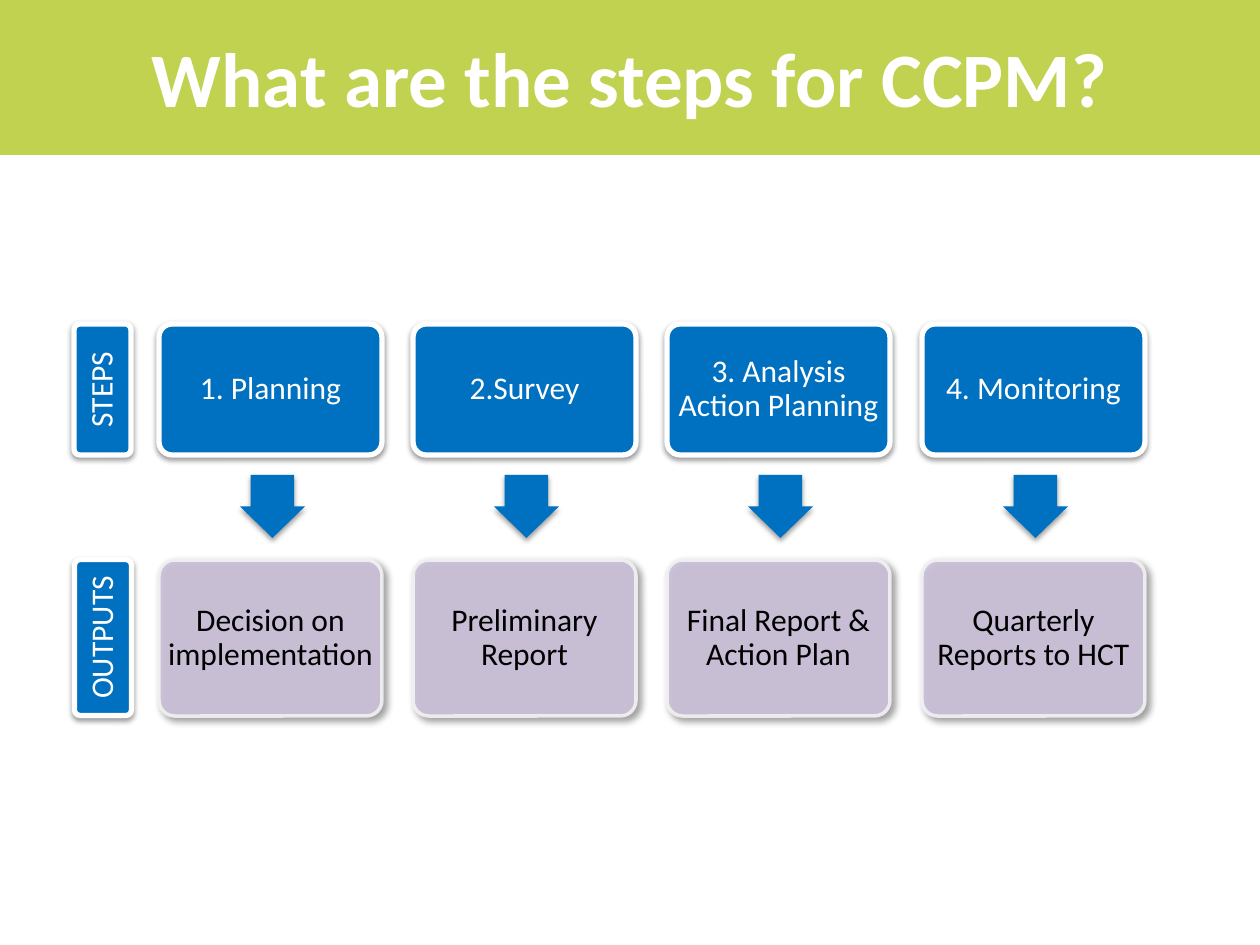
"""Build the slide showing the CCPM steps and the output of each one."""
from dataclasses import dataclass
from typing import Optional

from lxml.etree import SubElement
from pptx import Presentation
from pptx.dml.color import RGBColor
from pptx.enum.shapes import MSO_SHAPE
from pptx.enum.text import MSO_ANCHOR, PP_ALIGN
from pptx.oxml.ns import qn
from pptx.util import Emu, Pt

LIME = RGBColor(0xC1, 0xD1, 0x50)
BLUE = RGBColor(0x00, 0x70, 0xC0)
LILAC = RGBColor(0xCC, 0xC1, 0xDA)
PALE = RGBColor(0xF2, 0xF2, 0xF2)
WHITE = RGBColor(0xFF, 0xFF, 0xFF)
BLACK = RGBColor(0x00, 0x00, 0x00)

PX_PER_INCH = 126
FIRST_LEFT, LAST_LEFT = 159, 922
CARD_WIDTH = 223
STEP_TOP, STEP_HEIGHT = 324, 131
OUTPUT_TOP, OUTPUT_HEIGHT = 560, 156
LABEL_LEFT, LABEL_WIDTH = 74, 57
ARROW_TOP, ARROW_WIDTH, ARROW_HEIGHT, ARROW_INDENT = 475, 65, 63, 81


@dataclass(frozen=True)
class Shadow:
    blur: float
    distance: float
    angle: int
    opacity: int


@dataclass(frozen=True)
class Style:
    fill: RGBColor
    ink: RGBColor
    shadow: Optional[Shadow] = None
    line: Optional[RGBColor] = None
    line_width: int = 0
    opacity: int = 100
    size: int = 18
    bold: bool = False
    spacing: float = 0.9


@dataclass(frozen=True)
class Stage:
    step: str
    output: str


SOFT = Shadow(3.1, 1.6, 90, 38)
CAST = Shadow(4, 3, 45, 40)
BANNER = Style(LIME, WHITE, size=44, bold=True, spacing=1.0)
STEP = Style(BLUE, WHITE, SOFT, WHITE, 3)
OUTPUT = Style(LILAC, BLACK, CAST, PALE, 2, opacity=90)
ARROW = Style(BLUE, WHITE, SOFT)

STAGES = [
    Stage("1. Planning", "Decision on implementation"),
    Stage("2.Survey", "Preliminary Report"),
    Stage("3. Analysis Action Planning", "Final Report & Action Plan"),
    Stage("4. Monitoring", "Quarterly Reports to HCT"),
]


def px(length: int) -> Emu:
    """Turn pixels into EMU."""
    return Emu(round(length * 914400 / PX_PER_INCH))


def set_opacity(color, percent: int) -> None:
    """Give an RGB colour element its opacity."""
    SubElement(color, qn("a:alpha"), val=str(percent * 1000))


def cast_shadow(shape, shadow: Shadow) -> None:
    """Add an outer shadow to a shape."""
    effects = shape._element.spPr.find(qn("a:effectLst"))
    outer = SubElement(
        effects, qn("a:outerShdw"), blurRad=str(Pt(shadow.blur)),
        dist=str(Pt(shadow.distance)), dir=str(shadow.angle * 60000), rotWithShape="0")
    set_opacity(SubElement(outer, qn("a:srgbClr"), val=str(BLACK)), shadow.opacity)


def draw_shape(slide, kind: MSO_SHAPE, left: int, top: int, width: int, height: int,
               style: Style):
    """Draw a preset shape in the given style."""
    shape = slide.shapes.add_shape(kind, px(left), px(top), px(width), px(height))
    shape.fill.solid()
    shape.fill.fore_color.rgb = style.fill
    if style.line is None:
        shape.line.fill.background()
    else:
        shape.line.color.rgb = style.line
        shape.line.width = Pt(style.line_width)
    if style.opacity < 100:
        for color in shape._element.spPr.iter(qn("a:srgbClr")):
            set_opacity(color, style.opacity)
    shape.shadow.inherit = False
    if style.shadow:
        cast_shadow(shape, style.shadow)
    return shape


def write_text(shape, text: str, style: Style) -> None:
    """Centre a line of text in a shape."""
    frame = shape.text_frame
    frame.text = text
    frame.word_wrap = True
    frame.vertical_anchor = MSO_ANCHOR.MIDDLE
    frame.margin_left = frame.margin_right = px(3)
    frame.margin_top = frame.margin_bottom = px(3)
    paragraph = frame.paragraphs[0]
    paragraph.alignment = PP_ALIGN.CENTER
    paragraph.line_spacing = style.spacing
    font = paragraph.runs[0].font
    font.name = "Calibri"
    font.size = Pt(style.size)
    font.bold = style.bold
    font.color.rgb = style.ink


def draw_card(slide, text: str, left: int, top: int, width: int, height: int,
              style: Style):
    """Draw a rounded card with its text."""
    card = draw_shape(slide, MSO_SHAPE.ROUNDED_RECTANGLE, left, top, width, height, style)
    card.adjustments[0] = 0.1
    write_text(card, text, style)
    return card


def draw_row_label(slide, text: str, top: int, height: int) -> None:
    """Draw a label that reads upwards beside a row of cards."""
    shift = (height - LABEL_WIDTH) // 2
    label = draw_card(slide, text, LABEL_LEFT - shift, top + shift, height, LABEL_WIDTH, STEP)
    label.rotation = 270


def draw_stage(slide, stage: Stage, left: int) -> None:
    """Draw a step, the arrow below it and its output."""
    draw_card(slide, stage.step, left, STEP_TOP, CARD_WIDTH, STEP_HEIGHT, STEP)
    arrow = draw_shape(slide, MSO_SHAPE.DOWN_ARROW, left + ARROW_INDENT, ARROW_TOP,
                       ARROW_WIDTH, ARROW_HEIGHT, ARROW)
    arrow.adjustments[0] = 0.67
    arrow.adjustments[1] = 0.5
    draw_card(slide, stage.output, left, OUTPUT_TOP, CARD_WIDTH, OUTPUT_HEIGHT, OUTPUT)


def main() -> None:
    """Build and save the presentation."""
    deck = Presentation()
    deck.slide_width, deck.slide_height = px(1260), px(945)
    slide = deck.slides.add_slide(deck.slide_layouts[6])

    banner = draw_shape(slide, MSO_SHAPE.RECTANGLE, 0, -2, 1260, 157, BANNER)
    write_text(banner, "What are the steps for CCPM?", BANNER)

    for index, stage in enumerate(STAGES):
        left = FIRST_LEFT + (LAST_LEFT - FIRST_LEFT) * index // (len(STAGES) - 1)
        draw_stage(slide, stage, left)

    draw_row_label(slide, "STEPS", STEP_TOP, STEP_HEIGHT)
    draw_row_label(slide, "OUTPUTS", OUTPUT_TOP, OUTPUT_HEIGHT)
    deck.save("out.pptx")


if __name__ == "__main__":
    main()
